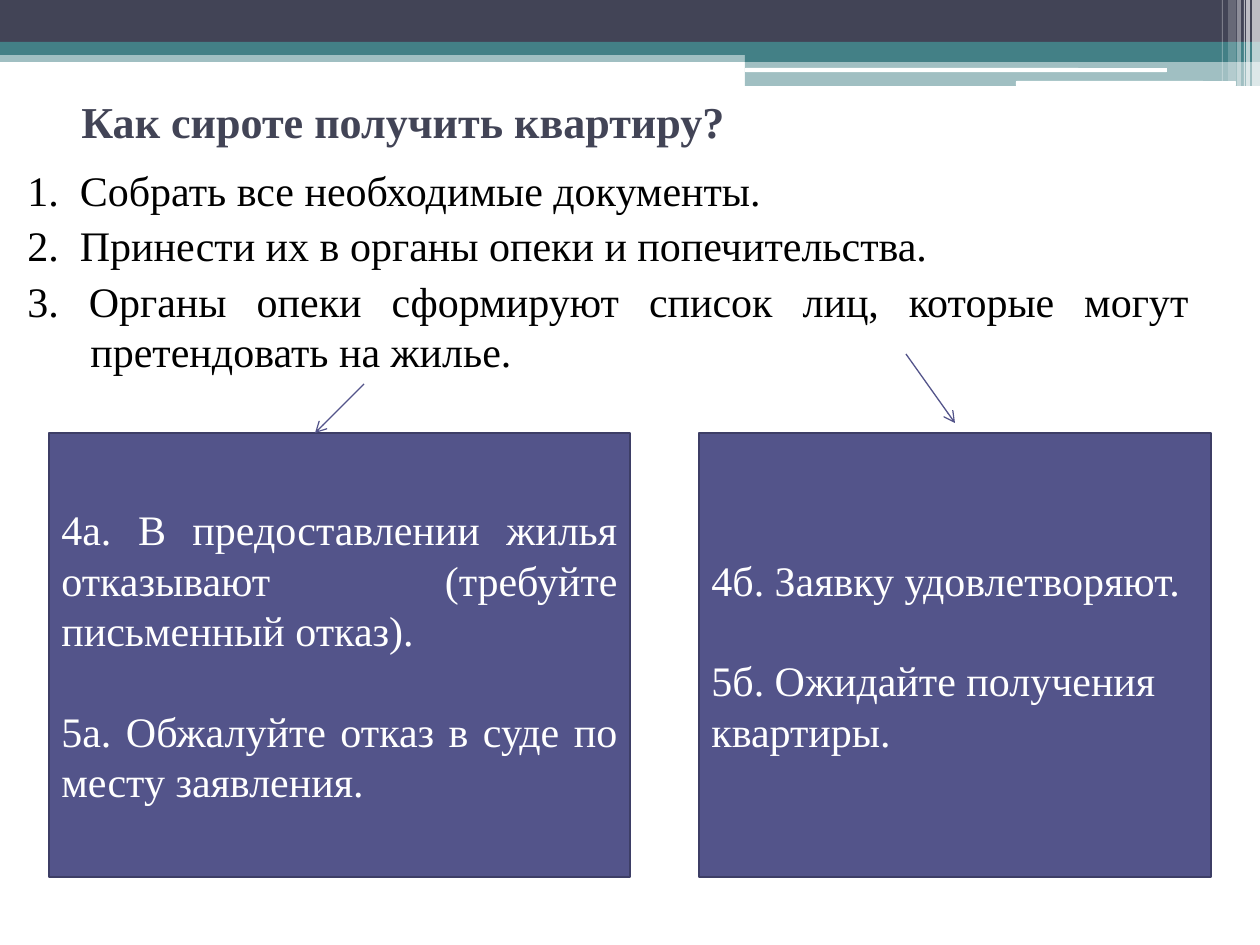
from lxml import etree
from pptx import Presentation
from pptx.dml.color import RGBColor
from pptx.enum.shapes import MSO_CONNECTOR, MSO_SHAPE
from pptx.enum.text import MSO_ANCHOR, PP_ALIGN
from pptx.oxml.ns import qn
from pptx.util import Emu, Pt

RECT, ROUND = MSO_SHAPE.RECTANGLE, MSO_SHAPE.ROUNDED_RECTANGLE
STRAIGHT = MSO_CONNECTOR.STRAIGHT
TOP, MIDDLE = MSO_ANCHOR.TOP, MSO_ANCHOR.MIDDLE
LEFT, JUSTIFY = PP_ALIGN.LEFT, PP_ALIGN.JUSTIFY

WHITE = RGBColor(0xFF, 0xFF, 0xFF)
BLACK = RGBColor(0x00, 0x00, 0x00)
SLATE = RGBColor(0x42, 0x44, 0x56)
TEAL = RGBColor(0x43, 0x80, 0x86)
INDIGO = RGBColor(0x53, 0x54, 0x8A)
NAVY = RGBColor(0x3D, 0x3E, 0x66)
FONT = "Times New Roman"
EMU_PER_PX = 914400 / 126


def px(n):
    """Turn pixels into EMU."""
    return Emu(round(n * EMU_PER_PX))


def add_box(s, x, y, w, h, color, alpha=100, kind=RECT):
    """Add a filled shape without outline, optionally see-through."""
    sp = s.shapes.add_shape(kind, px(x), px(y), px(w), px(h))
    sp.shadow.inherit = False
    sp.fill.solid()
    sp.fill.fore_color.rgb = color
    sp.line.fill.background()
    if alpha < 100:
        clr = sp.fill._xPr.find(qn("a:solidFill"))[0]
        etree.SubElement(clr, qn("a:alpha"), val=str(alpha * 1000))
    return sp


def write(tf, paragraphs, size=24, color=BLACK, bold=False, align=LEFT,
          anchor=TOP, gap=0, first_gap=0, margin=0, indent=0):
    """Fill a text frame with equally formatted paragraphs."""
    tf.word_wrap = True
    tf.vertical_anchor = anchor
    for i, text in enumerate(paragraphs):
        p = tf.add_paragraph() if i else tf.paragraphs[0]
        p.alignment = align
        p.space_before = Pt(gap if i else first_gap)
        pPr = p._p.get_or_add_pPr()
        pPr.set("marL", str(px(margin)))
        pPr.set("indent", str(px(indent)))
        r = p.add_run()
        r.text = text
        r.font.name, r.font.size, r.font.bold = FONT, Pt(size), bold
        r.font.color.rgb = color


def add_text(s, x, y, w, h, paragraphs, **fmt):
    """Add a text box."""
    tf = s.shapes.add_textbox(px(x), px(y), px(w), px(h)).text_frame
    write(tf, paragraphs, **fmt)


def add_header(s, x, y, w):
    """Draw the layered band with its stripes at the right end."""
    half = 745
    add_box(s, x, y + 50, w, 12, TEAL, 50)
    add_box(s, x, y, w, 42, SLATE)
    add_box(s, x, y + 42, w, 13, TEAL)
    add_box(s, x + half, y + 49, w - half, 13, TEAL)
    add_box(s, x + half, y + 61, w - half, 25, TEAL, 50)
    for left, top, width, height in ((half, 68, 422, 4), (1016, 81, 220, 5)):
        add_box(s, x + left, y + top, width, height, WHITE, kind=ROUND)
    stripes = ((8, 8, 86, 65), (14, 4, 86, 65), (16, 1, 86, 60),
               (23, 4, 86, 40), (32, 8, 81, 20), (38, 1, 81, 30))
    for inset, width, height, alpha in stripes:
        add_box(s, x + w - inset, y, width, height, WHITE, alpha)


def add_outcome(s, x, y, w, h, paragraphs, align):
    """Draw an outcome panel with its steps one line apart."""
    sp = add_box(s, x, y, w, h, INDIGO)
    sp.line.color.rgb = NAVY
    sp.line.width = Pt(1.5)
    write(sp.text_frame, paragraphs, color=WHITE, align=align,
          anchor=MIDDLE, gap=28.8)


def add_arrow(s, x1, y1, x2, y2):
    """Draw a thin line with an open arrowhead at its end."""
    c = s.shapes.add_connector(STRAIGHT, px(x1), px(y1), px(x2), px(y2))
    c.line.color.rgb = INDIGO
    c.line.width = Pt(0.75)
    etree.SubElement(c.line._get_or_add_ln(), qn("a:tailEnd"), type="arrow")
    etree.SubElement(c._element.spPr, qn("a:effectLst"))


def main():
    """Build the slide and save it."""
    prs = Presentation()
    prs.slide_width, prs.slide_height = px(1260), px(945)
    s = prs.slides.add_slide(prs.slide_layouts[6])
    add_header(s, 0, 0, 1260)
    add_text(s, 69, 88, 1134, 108, ["Как сироте получить квартиру?"],
             size=25.2, color=SLATE, bold=True)
    add_text(s, 0, 158, 1201, 758, [
        "1.  Собрать все необходимые документы.",
        "2.  Принести их в органы опеки и попечительства.",
        "3. Органы опеки сформируют список лиц, которые могут "
        "претендовать на жилье.",
    ], align=JUSTIFY, gap=3, first_gap=3, margin=78, indent=-63)
    add_outcome(s, 49, 433, 581, 444, [
        "4а. В предоставлении жилья отказывают (требуйте письменный отказ).",
        "5а. Обжалуйте отказ в суде по месту заявления.",
    ], JUSTIFY)
    add_outcome(s, 699, 433, 512, 444, [
        "4б. Заявку удовлетворяют.",
        "5б. Ожидайте получения квартиры.",
    ], LEFT)
    add_arrow(s, 364, 384, 315, 433)
    add_arrow(s, 906, 354, 955, 423)
    prs.save("out.pptx")


if __name__ == "__main__":
    main()
